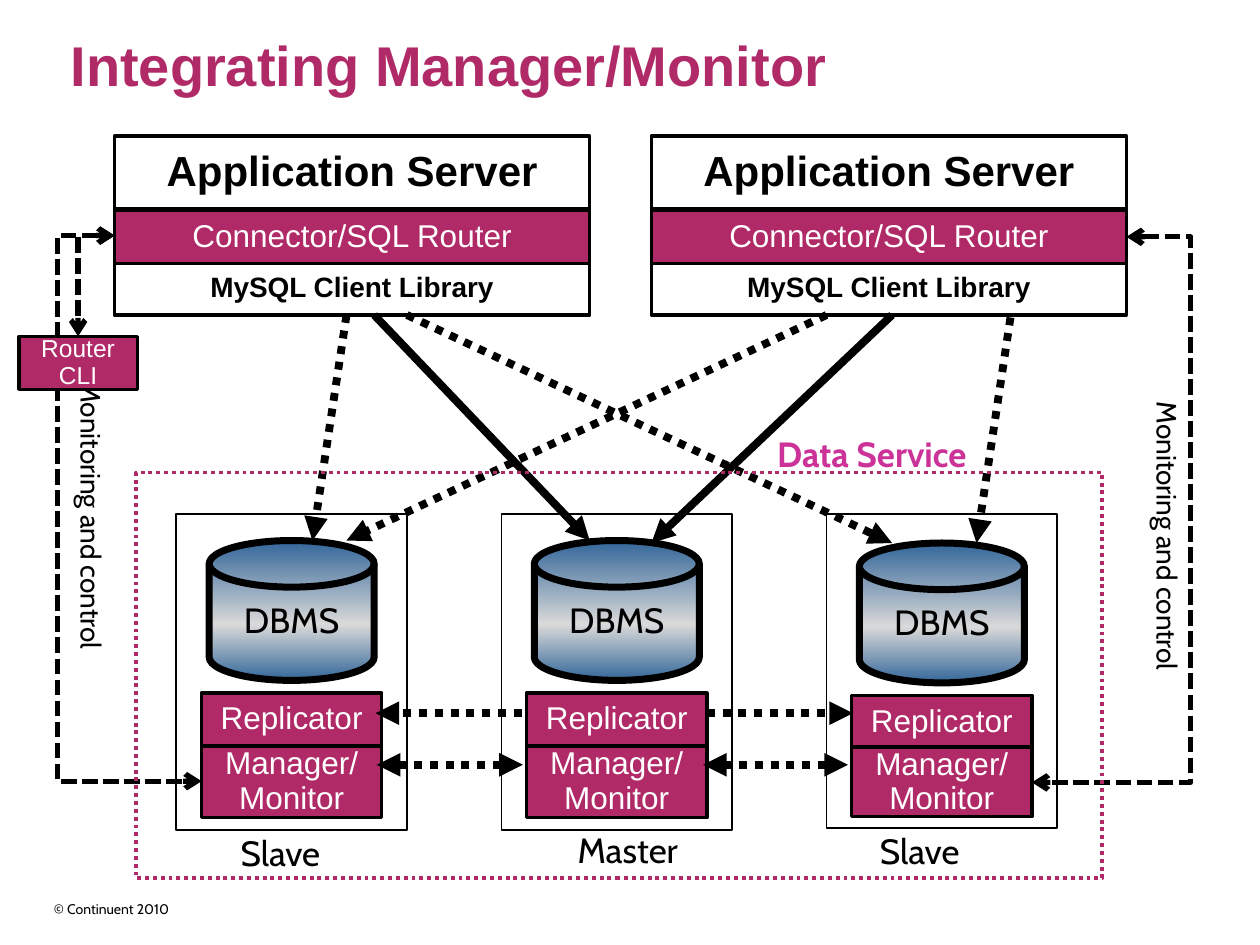
from copy import deepcopy
from dataclasses import dataclass
from typing import Optional

from lxml.etree import SubElement
from pptx import Presentation
from pptx.dml.color import RGBColor
from pptx.enum.dml import MSO_LINE as Dash
from pptx.enum.shapes import MSO_CONNECTOR as Connector, MSO_SHAPE as Preset
from pptx.enum.text import MSO_ANCHOR as Anchor, MSO_AUTO_SIZE as AutoSize, PP_ALIGN as Align
from pptx.oxml.ns import qn
from pptx.util import Inches, Pt

BLACK = RGBColor(0x00, 0x00, 0x00)
WHITE = RGBColor(0xFF, 0xFF, 0xFF)
PLUM = RGBColor(0xB1, 0x2A, 0x68)
PINK = RGBColor(0xCC, 0x33, 0x99)
STEEL = RGBColor(0x33, 0x66, 0x99)
SILVER = RGBColor(0xD9, 0xD9, 0xD9)
CYLINDER_STOPS = ((0, STEEL), (0.6, SILVER), (1, STEEL))

SLIDE_WIDTH, SLIDE_HEIGHT = Inches(10), Inches(7.5)
COLUMN, ROW = SLIDE_WIDTH / 100, SLIDE_HEIGHT / 75


@dataclass(frozen=True)
class Area:
    column: float
    row: float
    columns: float
    rows: float

    def lengths(self) -> tuple:
        return (round(self.column * COLUMN), round(self.row * ROW),
                round(self.columns * COLUMN), round(self.rows * ROW))


@dataclass(frozen=True)
class TextStyle:
    size: float
    color: RGBColor = BLACK
    font: str = "Arial"
    bold: bool = False
    align: Align = Align.CENTER


@dataclass(frozen=True)
class Node:
    column: float
    rows: float
    drop: float
    manager_row: float
    manager_rows: float
    manager: str
    role: str
    role_area: Area
    role_align: Align


@dataclass(frozen=True)
class Link:
    start: tuple
    end: tuple
    dash: Optional[Dash] = Dash.ROUND_DOT
    both_ends: bool = False


@dataclass(frozen=True)
class ControlPath:
    start: tuple
    end: tuple
    preset: str
    bend: Optional[int] = None


HEADING = TextStyle(32, PLUM, bold=True, align=Align.LEFT)
SERVER_NAME = TextStyle(24, bold=True)
LIBRARY_NAME = TextStyle(16, bold=True)
COMPONENT = TextStyle(18, WHITE)
DATABASE = TextStyle(20, font="Cabin")
CONTROL = TextStyle(16, font="Cabin", align=Align.RIGHT)

NODES = (
    Node(14, 25.1, 0, 59.2, 5.7, "Manager/\nMonitor", "Slave",
         Area(17.4, 65.9, 9, 4.1), Align.RIGHT),
    Node(39.8, 25.1, 0, 59.2, 5.7, "Manager/Monitor", "Master",
         Area(44.2, 65.6, 10.6, 4.1), Align.RIGHT),
    Node(65.6, 24.9, 0.2, 59.3, 5.5, "Manager/Monitor", "Slave",
         Area(68.5, 65.7, 9, 4.1), Align.CENTER),
)
SERVER_COLUMNS = (9.1, 51.7)
LINKS = (
    Link((41.4, 56.6), (29.8, 56.6)),
    Link((56.1, 56.6), (67.7, 56.6)),
    Link((41.5, 60.7), (29.9, 60.7), both_ends=True),
    Link((67.3, 60.7), (55.8, 60.7), both_ends=True),
    Link((29.7, 25), (46.8, 42.9), dash=None),
    Link((70.8, 25), (51.7, 43.1), dash=None),
    Link((27.5, 25), (24.8, 42.9)),
    Link((32.3, 25), (70.8, 43.1)),
    Link((65.6, 25), (27.5, 42.9)),
    Link((80.2, 25.2), (77.5, 43.1)),
)
CONTROL_PATHS = (
    ControlPath((9.1, 18.7), (16, 62), "bentConnector3", -65500),
    ControlPath((89.4, 18.8), (81.9, 62.1), "bentConnector3", -68000),
)
CLI_PATH = ControlPath((9.1, 18.7), (6.2, 26.7), "bentConnector2")
CONTROL_LABELS = (Area(-9.9, 33.8, 33.9, 3.5), Area(75.5, 35.5, 33.9, 3.5))


def write(shape, text: str, style: TextStyle) -> None:
    shape.text_frame.text = text
    for paragraph in shape.text_frame.paragraphs:
        paragraph.alignment = style.align
        paragraph.line_spacing = 0.9
        paragraph.font.name = style.font
        paragraph.font.size = Pt(style.size)
        paragraph.font.bold = style.bold
        paragraph.font.color.rgb = style.color


def add_label(slide, area: Area, text: str, style: TextStyle, wrap: bool = True,
              rotation: float = 0) -> None:
    label = slide.shapes.add_textbox(*area.lengths())
    label.rotation = rotation
    label.text_frame.word_wrap = wrap
    label.text_frame.auto_size = AutoSize.SHAPE_TO_FIT_TEXT
    write(label, text, style)


def add_box(slide, area: Area, fill: Optional[RGBColor], line_width: float = 2,
            text: str = "", style: TextStyle = COMPONENT, preset: Preset = Preset.RECTANGLE):
    box = slide.shapes.add_shape(preset, *area.lengths())
    box.shadow.inherit = False
    if fill is None:
        box.fill.background()
    else:
        box.fill.solid()
        box.fill.fore_color.rgb = fill
    box.line.color.rgb = BLACK
    box.line.width = Pt(line_width)
    if text:
        frame = box.text_frame
        frame.vertical_anchor = Anchor.MIDDLE
        if fill == PLUM:
            frame.margin_top = frame.margin_bottom = Inches(0.02)
        write(box, text, style)
    return box


def add_cylinder(slide, area: Area) -> None:
    cylinder = add_box(slide, area, STEEL, 4, "DBMS", DATABASE, Preset.FLOWCHART_MAGNETIC_DISK)
    cylinder.text_frame.word_wrap = False
    cylinder.fill.gradient()
    cylinder.fill.gradient_angle = 270
    stop_list = cylinder._element.spPr.find(".//" + qn("a:gsLst"))
    stop_list.append(deepcopy(stop_list[0]))
    for stop, (position, color) in zip(cylinder.fill.gradient_stops, CYLINDER_STOPS):
        stop.position = position
        stop.color.rgb = color


def add_node(slide, node: Node) -> None:
    add_box(slide, Area(node.column, 40.8, 18.3, node.rows), WHITE, 1)
    add_cylinder(slide, Area(node.column + 2.6, 42.9 + node.drop, 13.1, 11.1))
    add_box(slide, Area(node.column + 2, 55 + node.drop, 14.3, 4.2), PLUM, text="Replicator")
    add_box(slide, Area(node.column + 2, node.manager_row, 14.3, node.manager_rows),
            PLUM, text=node.manager)
    role_style = TextStyle(20, font="Cabin", align=node.role_align)
    add_label(slide, node.role_area, node.role, role_style, wrap=False)


def add_server(slide, column: float) -> None:
    add_box(slide, Area(column, 10.8, 37.7, 5.8), WHITE, text="Application Server",
            style=SERVER_NAME)
    add_box(slide, Area(column, 20.8, 37.7, 4.2), WHITE, text="MySQL Client Library",
            style=LIBRARY_NAME)
    add_box(slide, Area(column, 16.7, 37.7, 4.2), PLUM, text="Connector/SQL Router")


def add_arrow(slide, kind: Connector, start: tuple, end: tuple, width: float,
              dash: Optional[Dash], arrowheads: dict):
    (begin_column, begin_row), (end_column, end_row) = start, end
    arrow = slide.shapes.add_connector(
        kind, round(begin_column * COLUMN), round(begin_row * ROW),
        round(end_column * COLUMN), round(end_row * ROW))
    arrow.line.color.rgb = BLACK
    arrow.line.width = Pt(width)
    if dash is not None:
        arrow.line.dash_style = dash
    for tag, arrowhead in arrowheads.items():
        SubElement(arrow.line._get_or_add_ln(), qn(tag), type=arrowhead)
    SubElement(arrow._element.spPr, qn("a:effectLst"))
    return arrow


def add_link(slide, link: Link) -> None:
    arrowheads = {"a:headEnd": "triangle"} if link.both_ends else {}
    arrowheads["a:tailEnd"] = "triangle"
    add_arrow(slide, Connector.STRAIGHT, link.start, link.end, 4.5, link.dash, arrowheads)


def add_control_path(slide, route: ControlPath) -> None:
    arrow = add_arrow(slide, Connector.ELBOW, route.start, route.end, 3, Dash.SQUARE_DOT,
                      {"a:headEnd": "arrow", "a:tailEnd": "arrow"})
    geometry = arrow._element.spPr.find(qn("a:prstGeom"))
    geometry.set("prst", route.preset)
    if route.bend is not None:
        SubElement(geometry.find(qn("a:avLst")), qn("a:gd"), name="adj1",
                   fmla=f"val {route.bend}")


def main() -> None:
    presentation = Presentation()
    presentation.slide_width, presentation.slide_height = SLIDE_WIDTH, SLIDE_HEIGHT
    slide = presentation.slides.add_slide(presentation.slide_layouts[5])
    title = slide.shapes.title
    title.left, title.top, title.width, title.height = Area(4.6, 2.5, 90.5, 7.5).lengths()
    title.text_frame.vertical_anchor = Anchor.TOP
    write(title, "Integrating Manager/Monitor", HEADING)
    add_label(slide, Area(3.3, 71.1, 50, 2.2), "© Continuent 2010",
              TextStyle(8, font="Cabin", align=Align.LEFT))
    for node in NODES:
        add_node(slide, node)
    for column in SERVER_COLUMNS:
        add_server(slide, column)
    for link in LINKS:
        add_link(slide, link)
    for route, area in zip(CONTROL_PATHS, CONTROL_LABELS):
        add_control_path(slide, route)
        add_label(slide, area, "Monitoring and control", CONTROL, rotation=90)
    service = add_box(slide, Area(10.8, 37.5, 76.7, 32.2), None, 2.25)
    service.line.color.rgb = PLUM
    service.line.dash_style = Dash.ROUND_DOT
    add_label(slide, Area(56.7, 34.2, 25, 4.2), "Data Service",
              TextStyle(20, PINK, "Cabin", bold=True))
    add_box(slide, Area(1.5, 26.7, 9.4, 4.2), PLUM, text="Router CLI",
            style=TextStyle(14, WHITE))
    add_control_path(slide, CLI_PATH)
    presentation.save("out.pptx")


if __name__ == "__main__":
    main()
